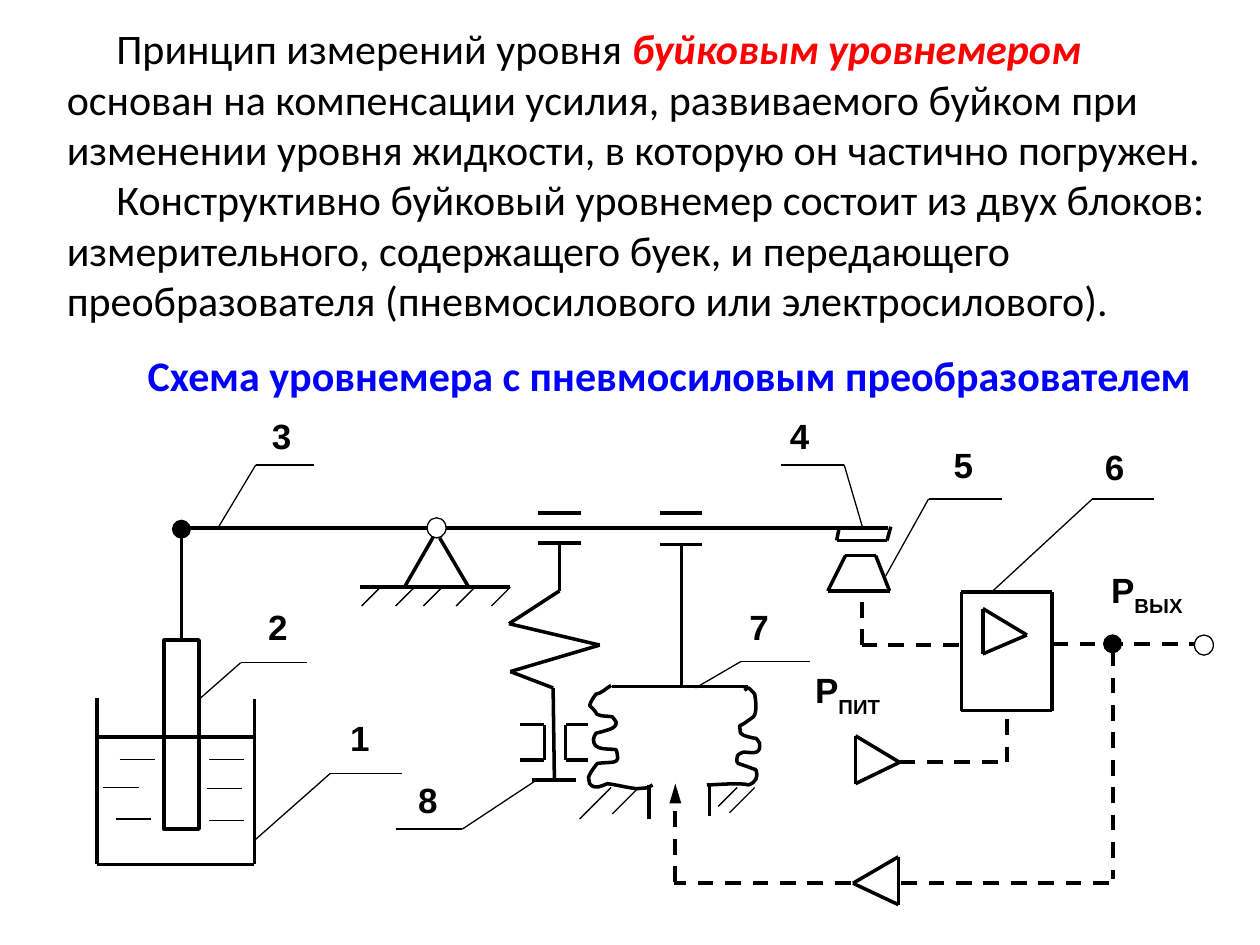
from lxml import etree
from pptx import Presentation
from pptx import util as u
from pptx.dml import color as c
from pptx.enum import dml, shapes, text
from pptx.oxml import ns

PX = u.Inches(1) // 100
THIN = {"width": u.Pt(0.75)}
BOLD = {"width": u.Pt(2)}
BEAM = {"width": u.Pt(2.25)}
DASHED = {"width": u.Pt(2.25), "dash_style": dml.MSO_LINE.DASH}
BODY = {"name": "Calibri", "size": u.Pt(24), "bold": False, "italic": False}
TERM = BODY | {"bold": True, "italic": True}
HEADING = BODY | {"bold": True}
LABEL = {"name": "Arial", "size": u.Pt(20), "bold": True}

LEFT_FOLDS = [
    (18, 0), (13, 3), (11, 6), (6, 7), (5, 8), (1, 14), (1, 16), (2, 17), (3, 18), (4, 19),
    (6, 20), (6, 23), (7, 23), (11, 25), (15, 24), (19, 25), (21, 28), (25, 30), (19, 34),
    (17, 35), (13, 36), (10, 37), (9, 37), (6, 38), (6, 38), (5, 40), (4, 41), (4, 43),
    (4, 52), (15, 50), (22, 51), (26, 64), (20, 60), (7, 62), (4, 66), (2, 68), (0, 73),
    (0, 75), (1, 76), (1, 78), (5, 83), (10, 80), (15, 78), (23, 79), (30, 81), (38, 82),
    (50, 81), (45, 82), (51, 79)]
RIGHT_FOLDS = [
    (30, 2), (31, 1), (32, 0), (33, 0), (35, 1), (38, 5), (38, 5), (39, 10), (40, 20), (37, 23),
    (35, 25), (32, 26), (30, 28), (29, 29), (26, 30), (26, 30), (27, 32), (26, 35), (27, 36),
    (28, 38), (37, 40), (39, 40), (40, 41), (41, 42), (42, 44), (43, 54), (36, 51), (29, 51),
    (27, 52), (26, 52), (25, 53), (24, 54), (23, 59), (25, 60), (25, 60), (34, 63), (36, 64),
    (37, 64), (39, 65), (39, 65), (41, 71), (39, 75), (33, 77), (27, 75), (7, 77), (0, 77)]
CALLOUTS = [
    ("1", (268, 564), [(51, 50), (-6, 50), (-66, 103)]),
    ("2", (203, 476), [(41, 50), (-12, 50), (-45, 79)]),
    ("3", (206, 324), [(43, 45), (-3, 45), (-33, 95)]),
    ("4", (617, 324), [(3, 45), (53, 45), (68, 96)]),
    ("5", (747, 347), [(48, 49), (-10, 49), (-44, 110)]),
    ("6", (867, 349), [(49, 47), (0, 47), (-79, 120)]),
    ("7", (585, 476), [(58, 49), (3, 49), (-33, 70)]),
    ("8", (322, 613), [(-8, 45), (45, 45), (104, 6)])]


def rgb(value):
    return c.RGBColor.from_string(value)


def apply(target, values, color="000000"):
    for name, value in values.items():
        setattr(target, name, value)
    if color:
        target.color.rgb = rgb(color)


def place(box, point):
    return (box[0] + point[0]) * PX, (box[1] + point[1]) * PX


def draw_lines(drawing, box, points, style, closed=False):
    ends = points[1:] + points[:1] if closed else points[1:]
    for start, end in zip(points, ends):
        connector = drawing.add_connector(
            shapes.MSO_CONNECTOR.STRAIGHT, *place(box, start), *place(box, end))
        apply(connector.line, style)
        etree.SubElement(connector._element.spPr, ns.qn("a:effectLst"))
    return connector


def draw_shape(drawing, box, kind, point, width, height, fill, style=THIN):
    shape = drawing.add_shape(kind, *place(box, point), width * PX, height * PX)
    shape.shadow.inherit = False
    shape.fill.solid()
    shape.fill.fore_color.rgb = rgb(fill)
    apply(shape.line, style)
    return shape


def draw_circle(drawing, box, point, width, height, fill):
    draw_shape(drawing, box, shapes.MSO_SHAPE.OVAL, point, width, height, fill)


def draw_curve(drawing, box, points):
    start, *controls = [place(box, point) for point in points]
    builder = drawing.build_freeform(*start)
    builder.add_line_segments(controls, close=False)
    shape = builder.convert_to_shape()
    segments = list(shape._element.iter(ns.qn("a:lnTo")))
    for first in range(0, len(segments), 3):
        triple = segments[first:first + 3]
        outline = triple[0].getparent()
        curve = etree.SubElement(outline, ns.qn("a:cubicBezTo"))
        for segment in triple:
            curve.append(segment[0])
            outline.remove(segment)
    shape.shadow.inherit = False
    shape.fill.background()
    apply(shape.line, BOLD)


def add_label(drawing, box, width, height, label, subscript=""):
    frame = drawing.add_textbox(*place(box, (0, 0)), width * PX, height * PX).text_frame
    frame.word_wrap = True
    paragraph = frame.paragraphs[0]
    for content in filter(None, (label, subscript)):
        run = paragraph.add_run()
        run.text = content
        apply(run.font, LABEL)
        if content == subscript:
            run._r.get_or_add_rPr().set("baseline", "-30000")


def add_description(slide, box):
    slide.shapes.title._element.getparent().remove(slide.shapes.title._element)
    body = slide.placeholders[1]
    body.left, body.top, body.width, body.height = (side * PX for side in box)
    frame = body.text_frame
    apply(frame, {"word_wrap": True, "auto_size": text.MSO_AUTO_SIZE.NONE}, None)
    left, center = text.PP_ALIGN.LEFT, text.PP_ALIGN.CENTER
    paragraphs = [
        (left, 0, [("Принцип измерений уровня ", BODY, "000000"),
                   ("буйковым уровнемером", TERM, "FF0000"),
                   (" основан на компенсации усилия, развиваемого буйком при изменении "
                    "уровня жидкости, в которую он частично погружен.", BODY, "000000")]),
        (left, 0, [("Конструктивно буйковый уровнемер состоит из двух блоков: "
                    "измерительного, содержащего буек, и передающего преобразователя "
                    "(пневмосилового или электросилового).", BODY, "000000")]),
        (center, 14, [("Схема уровнемера с пневмосиловым преобразователем",
                       HEADING, "0000FF")])]
    for index, (alignment, gap, runs) in enumerate(paragraphs):
        paragraph = frame.add_paragraph() if index else frame.paragraphs[0]
        properties = paragraph._p.get_or_add_pPr()
        properties.set("marL", "0")
        properties.set("indent", str(u.Cm(1)))
        etree.SubElement(properties, ns.qn("a:buNone"))
        apply(paragraph, {"alignment": alignment, "space_before": u.Pt(gap),
                          "space_after": u.Pt(0)}, None)
        for content, style, color in runs:
            run = paragraph.add_run()
            run.text = content
            apply(run.font, style, color)


def add_tank(drawing, box):
    displacer = draw_shape(drawing, box, shapes.MSO_SHAPE.RECTANGLE, (60, 108), 28, 150,
                           "FFFFFF", BOLD)
    rod = draw_lines(drawing, box, [(74, 20), (74, 108)], BOLD)
    rod.end_connect(displacer, 0)
    draw_circle(drawing, box, (67, 13), 14, 14, "000000")
    draw_lines(drawing, box, [(7, 154), (7, 286), (132, 286), (132, 155)], BOLD)
    draw_lines(drawing, box, [(7, 185), (132, 185)], BOLD)
    for x, y in [(25, 203), (12, 225), (22, 250), (96, 203), (94, 226), (96, 251)]:
        draw_lines(drawing, box, [(x, y), (x + 28, y)], THIN)


def add_lever(drawing, box):
    for start, end in [(0, 199), (214, 565)]:
        draw_lines(drawing, box, [(start, 19), (end, 19)], BEAM)
    draw_circle(drawing, box, (199, 11), 15, 16, "FFFFFF")
    for points in [[(204, 26), (181, 66)], [(209, 27), (232, 66)], [(146, 66), (265, 66)]]:
        draw_lines(drawing, box, points, BOLD)
    for x in (162, 189, 211, 237, 265):
        draw_lines(drawing, box, [(x, 66), (x - 15, 81)], THIN)


def add_spring(drawing, box):
    for points in [
            [(27, 7), (61, 7)], [(27, 31), (61, 31)], [(22, 219), (57, 219)],
            [(44, 31), (44, 69), (4, 95), (76, 112), (5, 133), (39, 146), (40, 219)],
            [(13, 175), (32, 175), (32, 203), (13, 203)],
            [(67, 175), (49, 175), (49, 203), (67, 203)]]:
        draw_lines(drawing, box, points, BOLD)


def add_bellows(drawing, box):
    for points in [
            [(64, 7), (97, 7)], [(64, 32), (97, 32)], [(81, 32), (81, 145)],
            [(26, 145), (134, 145)], [(55, 223), (55, 250)], [(103, 222), (103, 248)]]:
        draw_lines(drawing, box, points, BOLD)
    draw_curve(drawing, (box[0] + 7, box[1] + 144), LEFT_FOLDS)
    draw_curve(drawing, (box[0] + 101, box[1] + 146), RIGHT_FOLDS)
    for x, length in [(25, 25), (47, 21), (125, 15), (139, 20)]:
        draw_lines(drawing, box, [(x, 225), (x - length, 225 + length)], THIN)


def add_nozzle(drawing, box):
    draw_lines(drawing, box, [(16, 19), (14, 29), (54, 29), (57, 18)], BOLD)
    draw_lines(drawing, box, [(21, 41), (45, 41), (56, 69), (7, 69)], BOLD, closed=True)


def add_relay(drawing, box):
    draw_lines(drawing, box, [(3, 10), (75, 10), (75, 104), (3, 104)], BOLD, closed=True)
    draw_lines(drawing, box, [(20, 23), (55, 44), (20, 59)], BOLD, closed=True)


def add_air_lines(drawing, box):
    for points in [
            [(231, 52), (154, 52), (154, 9)], [(305, 51), (418, 51)], [(353, 56), (353, 238)],
            [(350, 241), (179, 241)], [(145, 241), (5, 241)],
            [(184, 145), (269, 145), (269, 106)]]:
        draw_lines(drawing, box, points, DASHED)
    feedback = draw_lines(drawing, box, [(6, 240), (6, 162)], DASHED)
    etree.SubElement(feedback.line._get_or_add_ln(), ns.qn("a:tailEnd"),
                     type="triangle", w="med", len="lg")
    for points in [[(149, 124), (184, 145), (149, 162)], [(183, 220), (147, 241), (183, 258)]]:
        draw_lines(drawing, box, points, BOLD, closed=True)
    draw_circle(drawing, box, (418, 44), 15, 16, "FFFFFF")
    draw_circle(drawing, box, (346, 44), 14, 14, "000000")


def add_callout(drawing, box, label, leader):
    draw_lines(drawing, box, leader, THIN)
    add_label(drawing, box, 57, 45, label)


def main():
    presentation = Presentation()
    presentation.slide_width, presentation.slide_height = 1000 * PX, 750 * PX
    slide = presentation.slides.add_slide(presentation.slide_layouts[1])
    add_description(slide, (43, 13, 937, 355))
    drawing = slide.shapes.add_group_shape().shapes
    for add_region, box in [
            (add_lever, (140, 400)), (add_tank, (70, 400)), (add_spring, (400, 400)),
            (add_bellows, (460, 400)), (add_nozzle, (650, 400)), (add_relay, (760, 460)),
            (add_air_lines, (530, 460))]:
        add_region(drawing, box)
    for label, box, leader in CALLOUTS:
        add_callout(drawing, box, label, leader)
    add_label(drawing, (872, 446), 94, 50, "P", "ВЫХ")
    add_label(drawing, (637, 526), 111, 50, "Р", "ПИТ")
    presentation.save("out.pptx")


if __name__ == "__main__":
    main()
